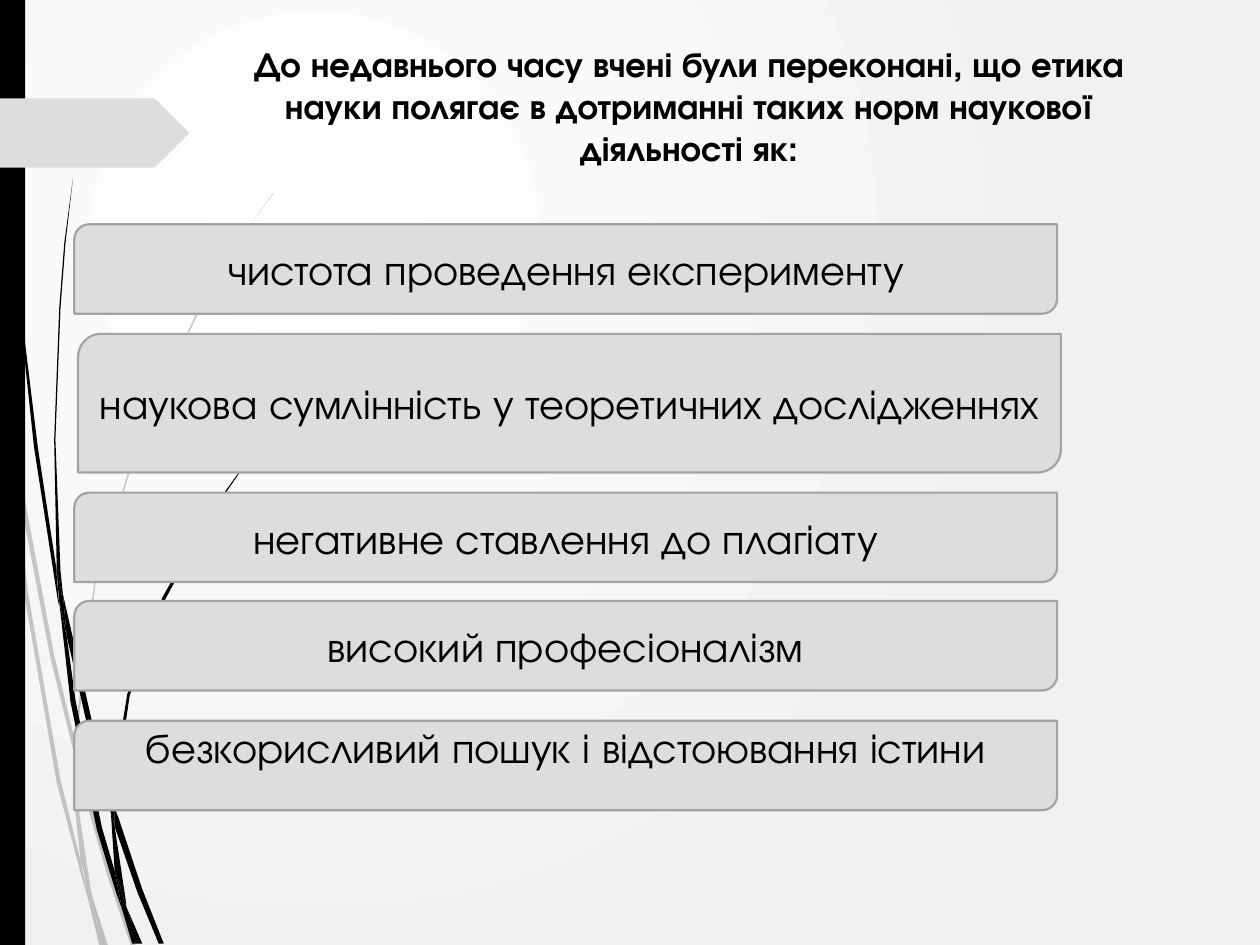
from lxml import etree
from pptx import Presentation
from pptx.dml.color import RGBColor
from pptx.enum.shapes import MSO_SHAPE
from pptx.enum.text import MSO_ANCHOR, PP_ALIGN
from pptx.oxml.ns import qn
from pptx.util import Inches, Pt

RECTANGLE = MSO_SHAPE.RECTANGLE
NORM_SHAPE = MSO_SHAPE.ROUND_2_DIAG_RECTANGLE
TOP, MIDDLE = MSO_ANCHOR.TOP, MSO_ANCHOR.MIDDLE
CENTER = PP_ALIGN.CENTER

FONT = "TeX Gyre Adventor"
COLORS = {"ink": "000000", "panel": "DDDDDD", "border": "A3A3A3",
          "glow": "FFFFFF", "paper": "F1F1F1"}

TITLE = ("До недавнього часу вчені були переконані, що етика науки "
         "полягає в дотриманні таких норм наукової діяльності як:")
# Text, left, top, height, bottom inset
NORMS = [
    ("чистота проведення експерименту", 0.59, 1.78, 0.71, 0.05),
    ("наукова сумлінність у теоретичних дослідженнях", 0.62, 2.65, 1.1, 0.05),
    ("негативне ставлення до плагіату", 0.59, 3.91, 0.71, 0.05),
    ("високий професіоналізм", 0.59, 4.77, 0.71, 0.05),
    ("безкорисливий пошук і відстоювання істини", 0.59, 5.72, 0.71, 0.34),
]

# Outlines of the grass blades, in inches
PALE_BLADES = [
    [(.08, 3.5), (.06, 3.22), (0, 2.82), (0, 2.99), (.07, 3.44)],
    [(.4, 5.22), (.59, 5.99), (.59, 5.86), (.43, 5.2), (.1, 3.45), (.12, 3.76)],
    [(.64, 6.07), (.61, 5.96), (.61, 6.1), (.85, 6.94), (1.04, 7.51),
     (1.08, 7.51), (.88, 6.92)],
    [(.83, 7.51), (.86, 7.51), (.73, 7.11)],
    [(.64, 6.83), (.48, 6.19), (.22, 4.69), (.12, 3.76), (.08, 3.5),
     (.19, 4.7), (.45, 6.21), (.64, 6.93), (.7, 7.14), (.69, 7.07)],
    [(.58, 5.99), (.6, 6.46), (.64, 6.83), (.67, 6.92), (.73, 7.11),
     (.72, 7.06), (.63, 6.46), (.61, 6.1), (.61, 6.08)],
    [(.61, 5.84), (.76, 4.62), (1.11, 3.49), (1.59, 2.45), (1.87, 1.98),
     (2.01, 1.75), (2.17, 1.54), (2.17, 1.53), (2.01, 1.75), (1.86, 1.97),
     (1.58, 2.44), (1.1, 3.48), (.75, 4.61), (.59, 5.84), (.59, 5.86),
     (.61, 5.96)],
    [(.7, 7.14), (.79, 7.51), (.82, 7.51)],
    [(.61, 6.08), (.61, 6.1), (.61, 5.96), (.59, 5.86), (.58, 5.99)],
    [(.67, 6.92), (.65, 6.83), (.69, 7.07), (.7, 7.14), (.82, 7.51),
     (.83, 7.51), (.73, 7.11)],
]
DARK_BLADES = [
    [(.05, 1.1), (.14, 2.33), (.27, 3.55), (.46, 4.77), (.47, 4.81),
     (.45, 4.57), (.45, 4.53), (.3, 3.55), (.15, 2.32), (.06, 1.09),
     (.04, .48), (.03, 0), (.02, 0), (.03, .48)],
    [(.73, 5.92), (.88, 6.45), (.88, 6.33), (.88, 6.31), (.77, 5.9),
     (.5, 4.72), (.53, 5.05)],
    [(.94, 6.49), (.91, 6.41), (.91, 6.56), (1.09, 7.08), (1.26, 7.49),
     (1.3, 7.49), (1.13, 7.06)],
    [(.91, 6.91), (.81, 6.57), (.6, 5.56), (.53, 5.05), (.47, 4.77),
     (.56, 5.57), (.77, 6.59), (.92, 7.08), (.97, 7.22), (.96, 7.17)],
    [(.5, 4.72), (.48, 4.53), (.44, 3.49), (.48, 2.45), (.52, 1.93),
     (.58, 1.41), (.51, 1.93), (.47, 2.45), (.43, 3.49), (.45, 4.49),
     (.49, 4.72)],
    [(1.1, 7.49), (1.13, 7.49), (1, 7.19)],
    [(.47, 4.77), (.53, 5.05), (.5, 4.72), (.49, 4.72), (.45, 4.49),
     (.45, 4.53)],
    [(.91, 6.33), (1.03, 5.52), (1.31, 4.76), (1.69, 4.06), (1.91, 3.74),
     (2.03, 3.59), (2.16, 3.44), (2.15, 3.44), (2.03, 3.58), (1.91, 3.73),
     (1.68, 4.05), (1.29, 4.74), (1.01, 5.51), (.88, 6.31), (.91, 6.41)],
    [(.97, 7.22), (1.05, 7.49), (1.08, 7.49)],
    [(.88, 6.45), (.91, 6.91), (.96, 7.06), (1, 7.19), (1, 7.16),
     (.91, 6.56), (.9, 6.51)],
    [(.88, 6.45), (.9, 6.51), (.91, 6.56), (.91, 6.41), (.88, 6.31),
     (.88, 6.33)],
    [(.96, 7.06), (.91, 6.91), (.96, 7.17), (.97, 7.22), (1.08, 7.49),
     (1.1, 7.49), (1, 7.19)],
]
TAG = [(0, .78), (1.21, .78), (1.24, .79), (1.49, 1.04), (1.5, 1.055),
       (1.49, 1.07), (1.24, 1.32), (1.21, 1.33), (0, 1.33)]


def rgb(name):
    return RGBColor.from_string(COLORS[name])


def paint(shape, fill, border=None, opacity=None):
    shape.shadow.inherit = False
    shape.fill.solid()
    shape.fill.fore_color.rgb = rgb(fill)
    if opacity is not None:
        color = shape.fill._xPr.find(qn("a:solidFill"))[0]
        etree.SubElement(color, qn("a:alpha"), val=str(opacity * 1000))
    if border:
        shape.line.color.rgb = rgb(border)
        shape.line.width = Pt(1.25)
    else:
        shape.line.fill.background()


def add_outline(shapes, points, fill, opacity=None):
    corners = [(Inches(x), Inches(y)) for x, y in points]
    builder = shapes.build_freeform(*corners[0])
    builder.add_line_segments(corners[1:], close=True)
    paint(builder.convert_to_shape(), fill, opacity=opacity)


def add_blades(slide, blades, opacity=None):
    tuft = slide.shapes.add_group_shape()
    for blade in blades:
        add_outline(tuft.shapes, blade, "ink", opacity)


def write(shape, text, anchor, font_format, bottom=0.05):
    frame = shape.text_frame
    frame_format = {"word_wrap": True, "vertical_anchor": anchor,
                    "margin_bottom": Inches(bottom)}
    for key, value in frame_format.items():
        setattr(frame, key, value)
    paragraph = frame.paragraphs[0]
    paragraph.alignment = CENTER
    run = paragraph.add_run()
    run.text = text
    for key, value in {"name": FONT, **font_format}.items():
        setattr(run.font, key, value)
    run.font.color.rgb = rgb("ink")


def add_norm(slide, text, left, top, height, bottom):
    norm = slide.shapes.add_shape(NORM_SHAPE, Inches(left), Inches(top),
                                  Inches(7.8), Inches(height))
    paint(norm, "panel", "border")
    write(norm, text, MIDDLE, {"size": Pt(24)}, bottom)


def set_background(slide):
    fill = slide.background.fill
    fill.gradient()
    for stop, position, name in zip(fill.gradient_stops, (0, 1),
                                    ("glow", "paper")):
        stop.position = position
        stop.color.rgb = rgb(name)
    # Turn the linear gradient into a circular one
    linear = next(slide.background._cSld.iter(qn("a:lin")))
    circle = etree.Element(qn("a:path"), path="circle")
    etree.SubElement(circle, qn("a:fillToRect"),
                     l="50000", t="50000", r="100000", b="100000")
    linear.getparent().replace(linear, circle)


def main():
    deck = Presentation()
    deck.slide_width, deck.slide_height = Inches(10), Inches(7.5)
    slide = deck.slides.add_slide(deck.slide_layouts[6])

    # Backdrop
    set_background(slide)
    add_blades(slide, PALE_BLADES, opacity=20)
    add_blades(slide, DARK_BLADES)
    edge = slide.shapes.add_shape(RECTANGLE, 0, 0, Inches(0.2), Inches(7.5))
    paint(edge, "ink")
    add_outline(slide.shapes, TAG, "panel")

    # Heading
    heading = slide.shapes.add_textbox(Inches(1.61), Inches(0.29),
                                       Inches(7.72), Inches(1.8))
    write(heading, TITLE, TOP, {"size": Pt(20), "bold": True})

    # Norms of scientific work
    for norm in NORMS:
        add_norm(slide, *norm)

    deck.save("out.pptx")


main()
